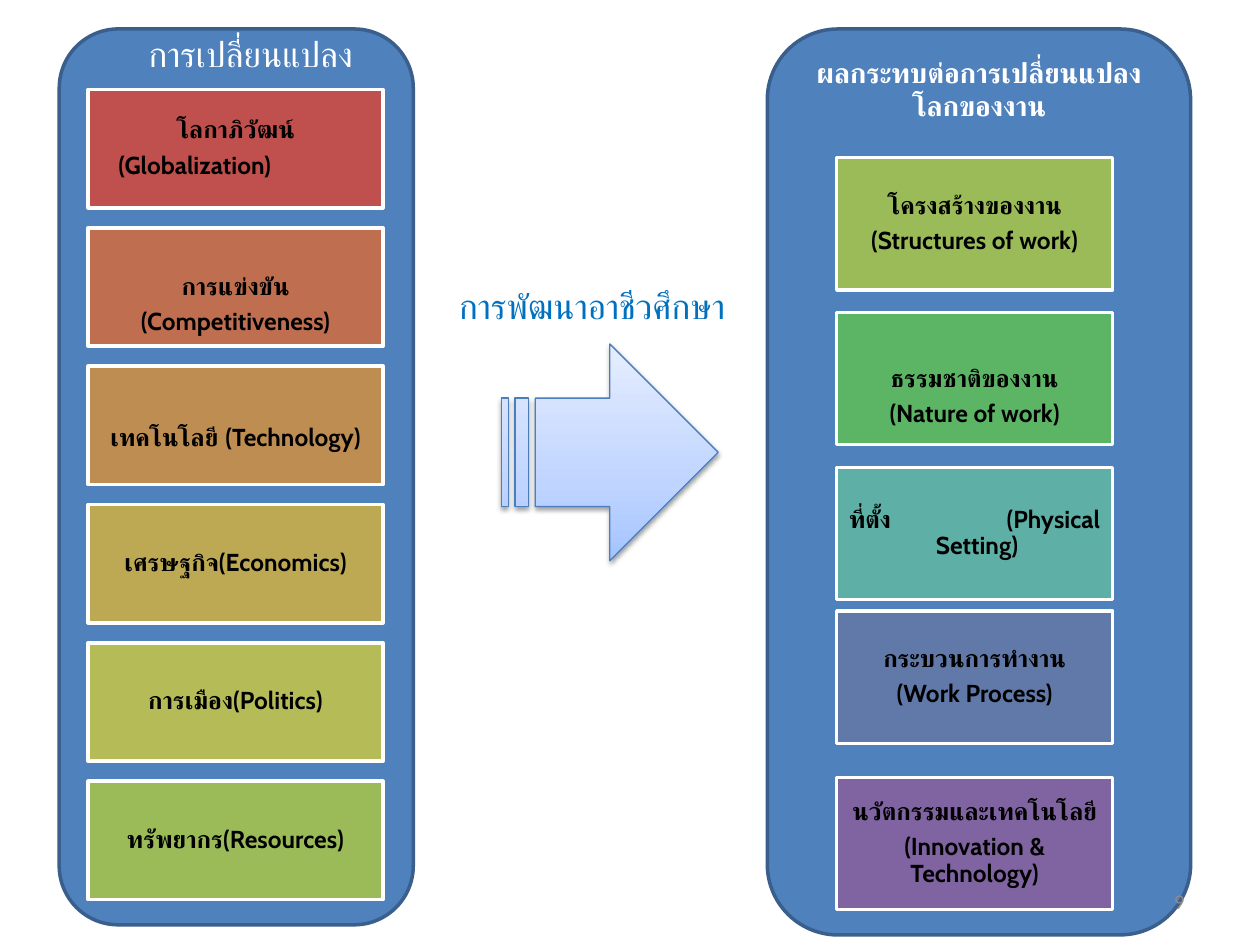
from dataclasses import dataclass

from lxml.etree import SubElement
from pptx import Presentation
from pptx.dml.color import RGBColor
from pptx.enum.shapes import MSO_SHAPE as Shape
from pptx.enum.text import MSO_ANCHOR as Anchor, PP_ALIGN as Align
from pptx.oxml import parse_xml
from pptx.oxml.ns import nsdecls, qn
from pptx.util import Inches, Pt

COLUMNS, ROWS = 100, 75


@dataclass(frozen=True)
class Theme:
    font: str = "Cabin"
    number_font: str = "Calibri"
    panel: str = "4F81BD"
    panel_edge: str = "3A5F8C"
    white: str = "FFFFFF"
    black: str = "000000"
    accent: str = "0070C0"
    muted: str = "8C8C8C"
    arrow_edge: str = "4B7EBC"
    arrow_stops: tuple = ((0, "A4C4FF"), (35, "BFD4FF"), (100, "E6EEFF"))
    title: int = 20
    heading: int = 16
    body: int = 14
    small: int = 12


class SlideBuilder:
    """Places styled elements on a grid of COLUMNS by ROWS."""

    def __init__(self, deck, theme):
        self.theme = theme
        self.cell_width = deck.slide_width / COLUMNS
        self.cell_height = deck.slide_height / ROWS
        self.slide = deck.slides.add_slide(deck.slide_layouts[6])

    def place(self, left, top, width, height):
        return (round(left * self.cell_width), round(top * self.cell_height),
                round(width * self.cell_width), round(height * self.cell_height))

    def shape(self, kind, area, fill, edge, weight=2):
        shape = self.slide.shapes.add_shape(kind, *self.place(*area))
        shape.shadow.inherit = False
        if fill:
            shape.fill.solid()
            shape.fill.fore_color.rgb = RGBColor.from_string(fill)
        shape.line.color.rgb = RGBColor.from_string(edge)
        shape.line.width = Pt(weight)
        return shape

    def set_text(self, shape, text, size, color, bold=False, align=Align.CENTER, font=None):
        frame = shape.text_frame
        frame.word_wrap = True
        frame.text = text
        for para in frame.paragraphs:
            para.alignment = align
            for span in para.runs:
                span.font.name = font or self.theme.font
                span.font.size = Pt(size)
                span.font.bold = bold
                span.font.color.rgb = RGBColor.from_string(color)
        return frame

    def panel(self, area):
        self.shape(Shape.ROUNDED_RECTANGLE, area, self.theme.panel, self.theme.panel_edge)

    def card(self, area, text, fill, drop=0):
        """A filled card; drop lowers the text by enlarging the top inset."""
        box = self.shape(Shape.RECTANGLE, area, fill, self.theme.white)
        frame = self.set_text(box, text, self.theme.body, self.theme.black, bold=True)
        frame.vertical_anchor = Anchor.MIDDLE
        frame.margin_left = frame.margin_right = frame.margin_bottom = Inches(0.06)
        frame.margin_top = Inches(0.06 + drop)
        for para in frame.paragraphs:
            para.line_spacing = 0.9
            para.space_after = Pt(5)
        return frame

    def label(self, area, text, size, color, **style):
        box = self.slide.shapes.add_textbox(*self.place(*area))
        return self.set_text(box, text, size, color, **style)

    def arrow(self, area):
        arrow = self.shape(Shape.STRIPED_RIGHT_ARROW, area, None, self.theme.arrow_edge, 0.75)
        stops = "".join(f'<a:gs pos="{share * 1000}"><a:srgbClr val="{color}"/></a:gs>'
                        for share, color in self.theme.arrow_stops)
        gradient = parse_xml(f'<a:gradFill {nsdecls("a")} rotWithShape="1"><a:gsLst>{stops}'
                             '</a:gsLst><a:lin ang="16200000" scaled="0"/></a:gradFill>')
        properties = arrow._element.spPr
        properties.find(qn("a:prstGeom")).addnext(gradient)
        shadow = SubElement(properties.find(qn("a:effectLst")), qn("a:outerShdw"),
                            blurRad=str(Pt(3.1)), dist=str(Pt(1.6)), dir="5400000",
                            rotWithShape="0")
        color = SubElement(shadow, qn("a:srgbClr"), val=self.theme.black)
        SubElement(color, qn("a:alpha"), val="38000")


CHANGES = [
    ("โลกาภิวัฒน์\n(Globalization)", "C0504D", 0),
    ("การแข่งขัน\n(Competitiveness)", "BF6F4F", 0.29),
    ("เทคโนโลยี (Technology)", "BE8D52", 0.21),
    ("เศรษฐกิจ(Economics)", "BDA954", 0),
    ("การเมือง(Politics)", "B5BC57", 0),
    ("ทรัพยากร(Resources)", "9BBB59", 0),
]
IMPACTS = [
    (12.5, "โครงสร้างของงาน\n(Structures of work)", "9BBB59", 0),
    (24.8, "ธรรมชาติของงาน\n(Nature of work)", "5CB565", 0.29),
    (37.1, "ที่ตั้ง\t(Physical\nSetting)", "5EAFA6", 0),
    (48.5, "กระบวนการทำงาน\n(Work Process)", "6179A8", 0),
    (61.7, "นวัตกรรมและเทคโนโลยี\n(Innovation & Technology)", "8064A2", 0),
]


def main():
    deck = Presentation()
    deck.slide_width, deck.slide_height = Inches(10), Inches(7.5)
    theme = Theme()
    page = SlideBuilder(deck, theme)

    # Background panels
    page.panel((60.9, 2.3, 33.6, 71.9))
    page.panel((4.7, 2.3, 28.1, 71.1))

    # Changes, evenly stacked
    changes = [page.card((7, 7.1 + 10.98 * row, 23.4, 9.4), *card)
               for row, card in enumerate(CHANGES)]
    english = changes[0].paragraphs[1]
    english.alignment = Align.LEFT
    english._p.get_or_add_pPr().set("marL", str(Inches(0.18)))

    # Impacts on the world of work
    impacts = [page.card((66.4, top, 21.9, 10.5), *card) for top, *card in IMPACTS]
    setting = impacts[2]
    setting.margin_left = Inches(0.1)
    first_line = setting.paragraphs[0]
    first_line.alignment = Align.LEFT
    first_line.space_after = Pt(0)
    tabs = SubElement(first_line._p.get_or_add_pPr(), qn("a:tabLst"))
    SubElement(tabs, qn("a:tab"), pos=str(Inches(1.25)), algn="l")

    # Headings
    page.label((60.9, 3.9, 33.6, 6.4), "ผลกระทบต่อการเปลี่ยนแปลง\nโลกของงาน",
               theme.heading, theme.white, bold=True)
    page.label((5.9, 2.1, 28, 4.4), "การเปลี่ยนแปลง", theme.title, theme.white)

    # Central arrow and its caption
    page.arrow((39.8, 27.3, 17.2, 17.2))
    page.label((33, 22.1, 28, 4.4), "การพัฒนาอาชีวศึกษา", theme.title, theme.accent)

    # Page number
    number = page.label((71.7, 69.5, 23.3, 4), "9", theme.small, theme.muted,
                        align=Align.RIGHT, font=theme.number_font)
    number.vertical_anchor = Anchor.MIDDLE

    deck.save("out.pptx")


if __name__ == "__main__":
    main()
